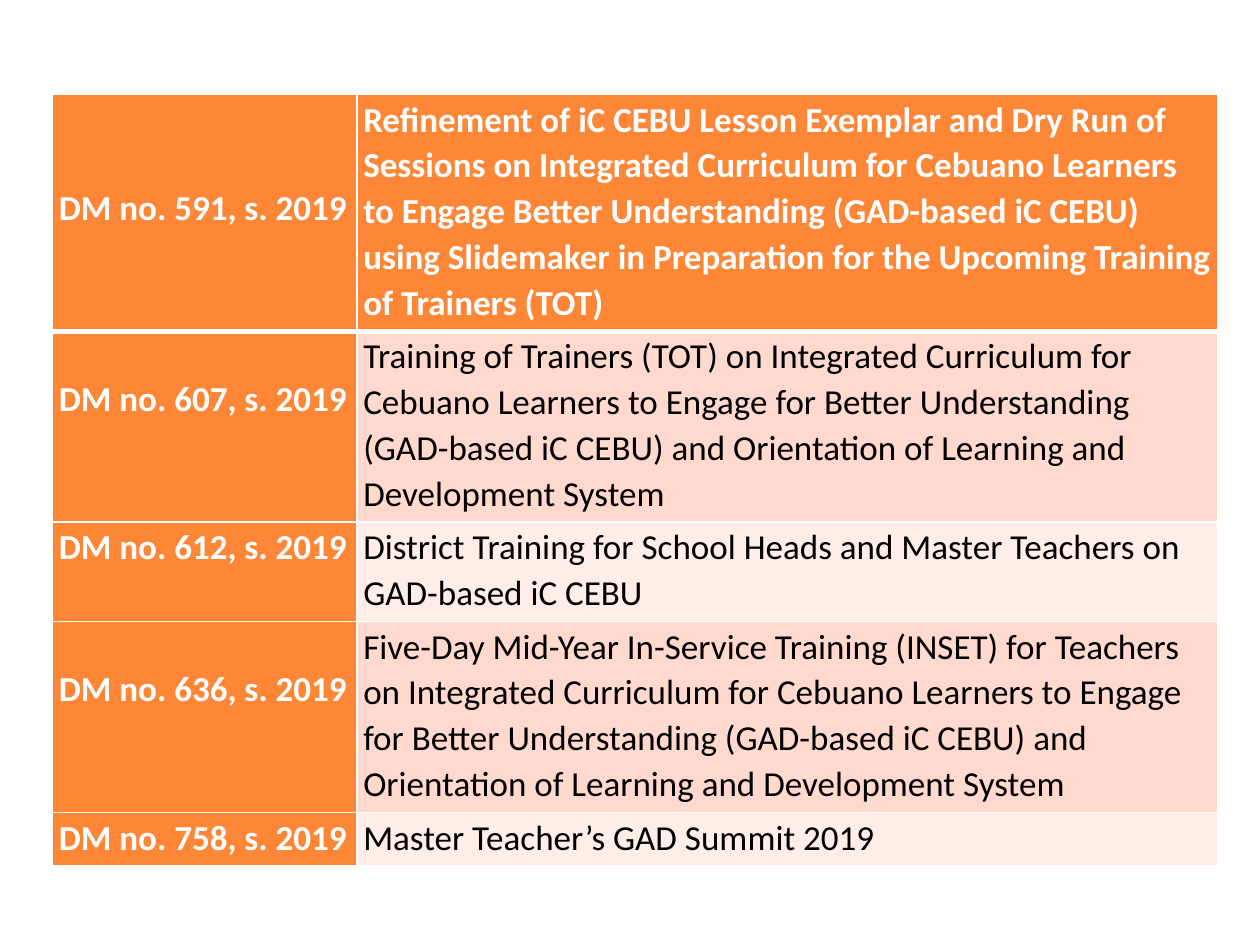
from lxml.etree import SubElement as Sub
from pptx import Presentation
from pptx.dml.color import RGBColor
from pptx.oxml.ns import qn
from pptx.util import Pt

ORANGE, PEACH, BLUSH = "FE8637", "FFD9CE", "FFEDE8"
WHITE, BLACK = "FFFFFF", "000000"
LINE = 26.05  # height of one line of text
PAD = {"margin_left": 3.6, "margin_right": 2.16, "margin_bottom": 3.6}
TOP = 0.72

# number, lines skipped above it, title, lines in the title
MEMOS = [
    ("591", 2, "Refinement of iC CEBU Lesson Exemplar and Dry Run of Sessions on "
     "Integrated Curriculum for Cebuano Learners to Engage Better Understanding "
     "(GAD-based iC CEBU) using Slidemaker in Preparation for the Upcoming "
     "Training of Trainers (TOT)", 5),
    ("607", 1, "Training of Trainers (TOT) on Integrated Curriculum for Cebuano "
     "Learners to Engage for Better Understanding (GAD-based iC CEBU) and "
     "Orientation of Learning and Development System", 4),
    ("612", 0, "District Training for School Heads and Master Teachers on "
     "GAD-based iC CEBU", 2),
    ("636", 1, "Five-Day Mid-Year In-Service Training (INSET) for Teachers on "
     "Integrated Curriculum for Cebuano Learners to Engage for Better "
     "Understanding (GAD-based iC CEBU) and Orientation of Learning and "
     "Development System", 4),
    ("758", 0, "Master Teacher’s GAD Summit 2019", 1),
]


def rgb(code):
    return RGBColor.from_string(code)


def edge(cell, head):
    """Draw white borders, with a thick one below or above at the head row."""
    props = cell._tc.get_or_add_tcPr()
    for side in "LRTB":
        wide = 3 if side == head else 1
        line = Sub(props, qn(f"a:ln{side}"), w=str(Pt(wide)))
        Sub(Sub(line, qn("a:solidFill")), qn("a:srgbClr"), val=WHITE)


def put(cell, text, fill, strong, skip=0, head=None):
    edge(cell, head)
    cell.fill.solid()
    cell.fill.fore_color.rgb = rgb(fill)
    for name, size in PAD.items():
        setattr(cell, name, Pt(size))
    cell.margin_top = Pt(max(TOP, skip * LINE - 1))
    par = cell.text_frame.paragraphs[0]
    par.line_spacing = 1.07
    run = par.add_run()
    run.text = text
    look = {"name": "Calibri", "size": Pt(20), "bold": strong}
    for name, value in look.items():
        setattr(run.font, name, value)
    run.font.color.rgb = rgb(WHITE if strong else BLACK)


def memo_table(slide, left, top, width, height):
    frame = slide.shapes.add_table(
        len(MEMOS), 2, Pt(left), Pt(top), Pt(width), Pt(height))
    table = frame.table
    first = 174
    for col, size in zip(table.columns, (first, width - first)):
        col.width = Pt(size)
    for i, (num, skip, title, lines) in enumerate(MEMOS):
        table.rows[i].height = Pt(lines * LINE + TOP + PAD["margin_bottom"])
        head = {0: "B", 1: "T"}.get(i)
        fill = (BLUSH, PEACH)[i % 2] if i else ORANGE
        put(table.cell(i, 0), f"DM no. {num}, s. 2019", ORANGE, True, skip, head)
        put(table.cell(i, 1), title, fill, i == 0, head=head)


def main():
    deck = Presentation()
    deck.slide_width, deck.slide_height = Pt(720), Pt(540)
    slide = deck.slides.add_slide(deck.slide_layouts[6])
    memo_table(slide, 30, 54, 666, 440)
    deck.save("out.pptx")


if __name__ == "__main__":
    main()
